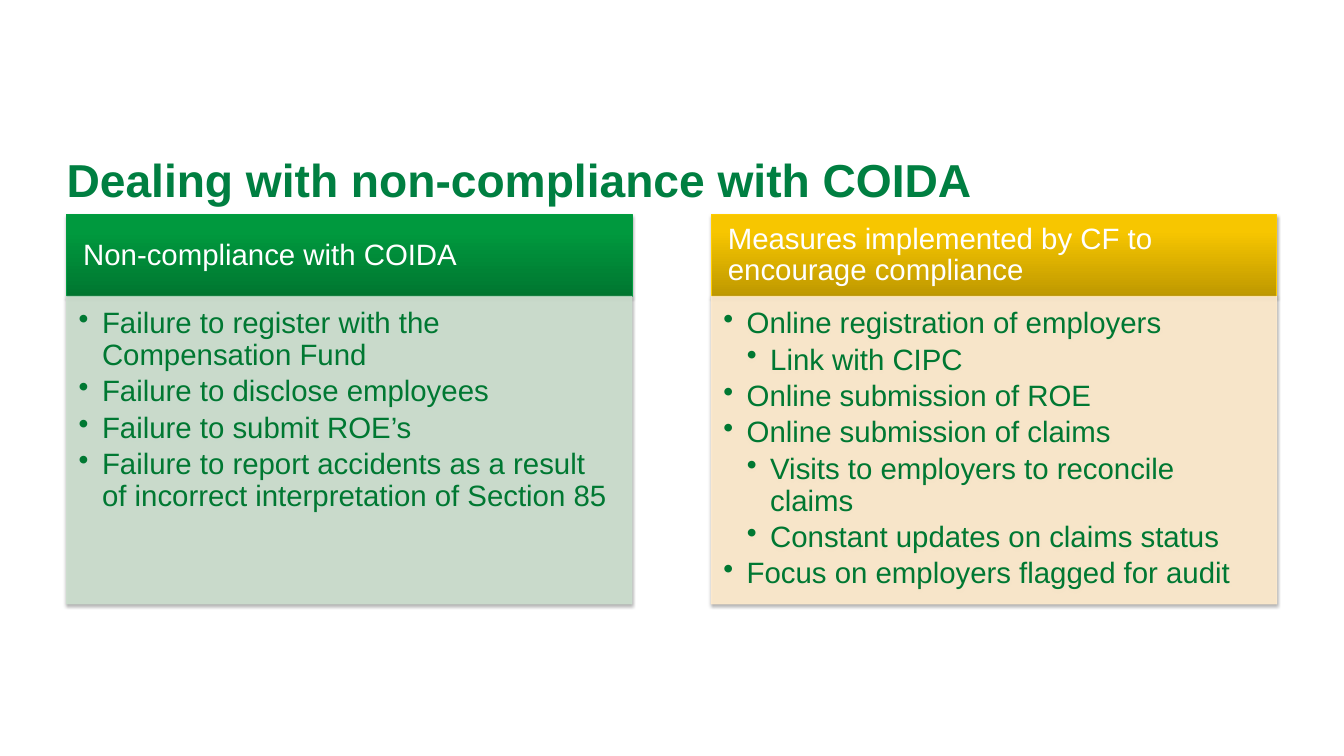
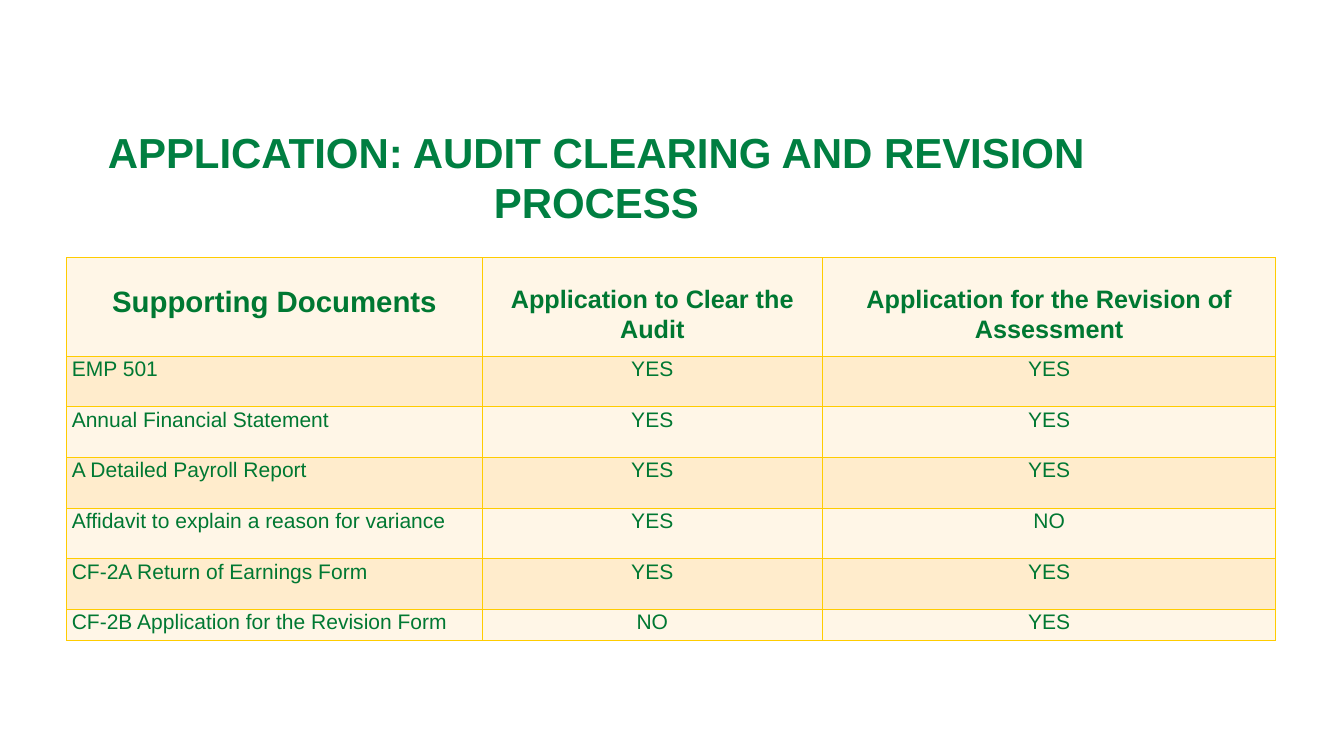
"""Builds two slides on compliance with COIDA: a two-panel comparison and a document table."""
import dataclasses
import typing

import pptx
import pptx.dml.color
import pptx.enum.shapes
import pptx.enum.text
import pptx.oxml
import pptx.oxml.ns
import pptx.util

WIDTH, HEIGHT = 17.78, 10
COLUMN, ROW = WIDTH / 100, HEIGHT / 100
MARGIN, CONTENT_WIDTH = 4.95, 90.04
PANEL_WIDTH, PANEL_TOP, HEADING_HEIGHT, BODY_HEIGHT = 42.07, 28.4, 10.8, 40.7
INDENT = 0.31
FONT = "Arial"
COLORS = {
    "title": "007F41", "text": "007832", "white": "FFFFFF", "shadow": "000000",
    "green": "009E40", "green dark": "007630", "green mid": "00993E", "green light": "009A3E",
    "green pale": "CCDFCF",
    "gold": "FFCC00", "gold dark": "BE9800", "gold mid": "F7C600", "gold light": "F8C700",
    "gold pale": "FFEBCC", "band light": "FFF6E7", "band dark": "FFECCC",
}
CENTER = pptx.enum.text.PP_ALIGN.CENTER
MIDDLE = pptx.enum.text.MSO_ANCHOR.MIDDLE
TOP = pptx.enum.text.MSO_ANCHOR.TOP


@dataclasses.dataclass(frozen=True)
class Area:
    left: float
    top: float
    width: float
    height: float

    def lengths(self) -> tuple:
        return (pptx.util.Inches(self.left * COLUMN), pptx.util.Inches(self.top * ROW),
                pptx.util.Inches(self.width * COLUMN), pptx.util.Inches(self.height * ROW))


class Point(typing.NamedTuple):
    text: str
    level: int = 1


@dataclasses.dataclass(frozen=True)
class Panel:
    heading: str
    tint: str
    points: list[Point]


PANELS = [
    Panel("Non-compliance with COIDA", "green", [
        Point("Failure to register with the Compensation Fund"),
        Point("Failure to disclose employees"),
        Point("Failure to submit ROE’s"),
        Point("Failure to report accidents as a result of incorrect interpretation of Section 85"),
    ]),
    Panel("Measures implemented by CF to encourage compliance", "gold", [
        Point("Online registration of employers"),
        Point("Link with CIPC", 2),
        Point("Online submission of ROE"),
        Point("Online submission of claims"),
        Point("Visits to employers to reconcile claims", 2),
        Point("Constant updates on claims status", 2),
        Point("Focus on employers flagged for audit"),
    ]),
]
TABLE_COLUMNS = [30.93, 25.31, 33.75]
TABLE_ROWS = [13] + [6.7] * 5 + [4.2]
HEADER_SIZES = [28, 24, 24]
DOCUMENTS = [
    ("Supporting Documents", "Application to Clear the Audit",
     "Application for the Revision of Assessment"),
    ("EMP 501", "YES", "YES"),
    ("Annual Financial Statement", "YES", "YES"),
    ("A Detailed Payroll Report", "YES", "YES"),
    ("Affidavit to explain a reason for variance", "YES", "NO"),
    ("CF-2A Return of Earnings Form", "YES", "YES"),
    ("CF-2B Application for the Revision Form", "NO", "YES"),
]


def rgb(name: str) -> pptx.dml.color.RGBColor:
    return pptx.dml.color.RGBColor.from_string(COLORS[name])


def xml(markup: str):
    tag, rest = markup.split(" ", 1)
    return pptx.oxml.parse_xml(f"{tag} {pptx.oxml.ns.nsdecls('a')} {rest}")


def write(frame, text: str, *, size: float, color: str = "text", bold: bool = False,
          align=None, spacing: float | None = None, after: float = 0, level: int = 0) -> None:
    para = frame.paragraphs[0] if not frame.text else frame.add_paragraph()
    if level:
        properties = para._p.get_or_add_pPr()
        properties.set("marL", str(pptx.util.Inches(INDENT * level)))
        properties.set("indent", str(-pptx.util.Inches(INDENT)))
        properties.append(xml('<a:buChar char="•"/>'))
        para.level = level
    para.alignment = align
    para.line_spacing = spacing
    para.space_before = pptx.util.Pt(0)
    para.space_after = pptx.util.Pt(after)
    span = para.add_run()
    span.text = text
    span.font.name = FONT
    span.font.size = pptx.util.Pt(size)
    span.font.bold = bold
    span.font.color.rgb = rgb(color)


def set_insets(holder, left: float, top: float, right: float, bottom: float) -> None:
    holder.margin_left, holder.margin_top = pptx.util.Inches(left), pptx.util.Inches(top)
    holder.margin_right, holder.margin_bottom = pptx.util.Inches(right), pptx.util.Inches(bottom)


def add_title(slide, text: str, area: Area, size: float, align=None) -> None:
    frame = slide.shapes.add_textbox(*area.lengths()).text_frame
    frame.word_wrap = True
    set_insets(frame, 0, 0, 0, 0)
    write(frame, text, size=size, color="title", bold=True, align=align)


def add_box(slide, area: Area, line: str, anchor):
    box = slide.shapes.add_shape(pptx.enum.shapes.MSO_SHAPE.RECTANGLE, *area.lengths())
    box.line.color.rgb = rgb(line)
    box.line.width = pptx.util.Pt(0.75)
    box.shadow.inherit = False
    effects = box._element.spPr.find(pptx.oxml.ns.qn("a:effectLst"))
    effects.append(xml(
        f'<a:outerShdw blurRad="{pptx.util.Pt(3.1)}" dist="{pptx.util.Pt(1.8)}" dir="5400000" '
        f'rotWithShape="0"><a:srgbClr val="{COLORS["shadow"]}"><a:alpha val="35000"/>'
        '</a:srgbClr></a:outerShdw>'))
    box.text_frame.word_wrap = True
    box.text_frame.vertical_anchor = anchor
    return box


def fill_gradient(box, tint: str) -> None:
    box.fill.gradient()
    box.fill.gradient_angle = 90
    stops = next(box._element.spPr.iter(pptx.oxml.ns.qn("a:gsLst")))
    for stop in list(stops):
        stops.remove(stop)
    for position, shade in ((0, "dark"), (80, "mid"), (100, "light")):
        stops.append(xml(f'<a:gs pos="{position * 1000}">'
                         f'<a:srgbClr val="{COLORS[f"{tint} {shade}"]}"/></a:gs>'))


def add_panel(slide, panel: Panel, left: float) -> None:
    heading = add_box(slide, Area(left, PANEL_TOP, PANEL_WIDTH, HEADING_HEIGHT),
                      panel.tint, MIDDLE)
    fill_gradient(heading, panel.tint)
    set_insets(heading.text_frame, 0.22, 0.12, 0.22, 0.12)
    write(heading.text_frame, panel.heading, size=28, color="white", spacing=0.9,
          align=pptx.enum.text.PP_ALIGN.LEFT)

    pale = f"{panel.tint} pale"
    body = add_box(slide, Area(left, PANEL_TOP + HEADING_HEIGHT, PANEL_WIDTH, BODY_HEIGHT),
                   pale, TOP)
    body.fill.solid()
    body.fill.fore_color.rgb = rgb(pale)
    for color in body._element.spPr.iter(pptx.oxml.ns.qn("a:srgbClr")):
        if color.get("val") == COLORS[pale]:
            color.append(xml('<a:alpha val="90000"/>'))
    set_insets(body.text_frame, 0.16, 0.16, 0.22, 0.24)
    for point in panel.points:
        write(body.text_frame, point.text, size=28, spacing=0.9, after=4.4, level=point.level,
              align=pptx.enum.text.PP_ALIGN.LEFT)


def style_cell(cell, fill: str) -> None:
    properties = cell._tc.get_or_add_tcPr()
    for side in "LRTB":
        properties.append(xml(
            f'<a:ln{side} w="{pptx.util.Pt(1)}"><a:solidFill>'
            f'<a:srgbClr val="{COLORS["gold"]}"/></a:solidFill></a:ln{side}>'))
    cell.fill.solid()
    cell.fill.fore_color.rgb = rgb(fill)


def add_document_table(slide) -> None:
    area = Area(MARGIN, 34.1, CONTENT_WIDTH, sum(TABLE_ROWS))
    table = slide.shapes.add_table(len(TABLE_ROWS), len(TABLE_COLUMNS), *area.lengths()).table
    table.horz_banding = False
    for column, width in zip(table.columns, TABLE_COLUMNS):
        column.width = pptx.util.Inches(width * COLUMN)
    for row_index, (row, height) in enumerate(zip(table.rows, TABLE_ROWS)):
        row.height = pptx.util.Inches(height * ROW)
        is_header = row_index == 0
        for column_index, cell in enumerate(row.cells):
            style_cell(cell, "band dark" if row_index % 2 else "band light")
            set_insets(cell, 0.07, 0.34 if is_header else 0, 0.07, 0)
            write(cell.text_frame, DOCUMENTS[row_index][column_index], spacing=1.07,
                  size=HEADER_SIZES[column_index] if is_header else 20, bold=is_header,
                  align=CENTER if is_header or column_index else None)


def main() -> None:
    deck = pptx.Presentation()
    deck.slide_width, deck.slide_height = pptx.util.Inches(WIDTH), pptx.util.Inches(HEIGHT)
    blank = deck.slide_layouts[6]

    compliance = deck.slides.add_slide(blank)
    add_title(compliance, "Dealing with non-compliance with COIDA",
              Area(MARGIN, 20, 72.67, 7.4), 44)
    for index, panel in enumerate(PANELS):
        add_panel(compliance, panel, MARGIN + index * (CONTENT_WIDTH - PANEL_WIDTH))

    application = deck.slides.add_slide(blank)
    add_title(application, "APPLICATION: AUDIT CLEARING AND REVISION PROCESS",
              Area(6.41, 16.7, 75.93, 13.5), 40, CENTER)
    add_document_table(application)

    deck.save("out.pptx")


if __name__ == "__main__":
    main()
